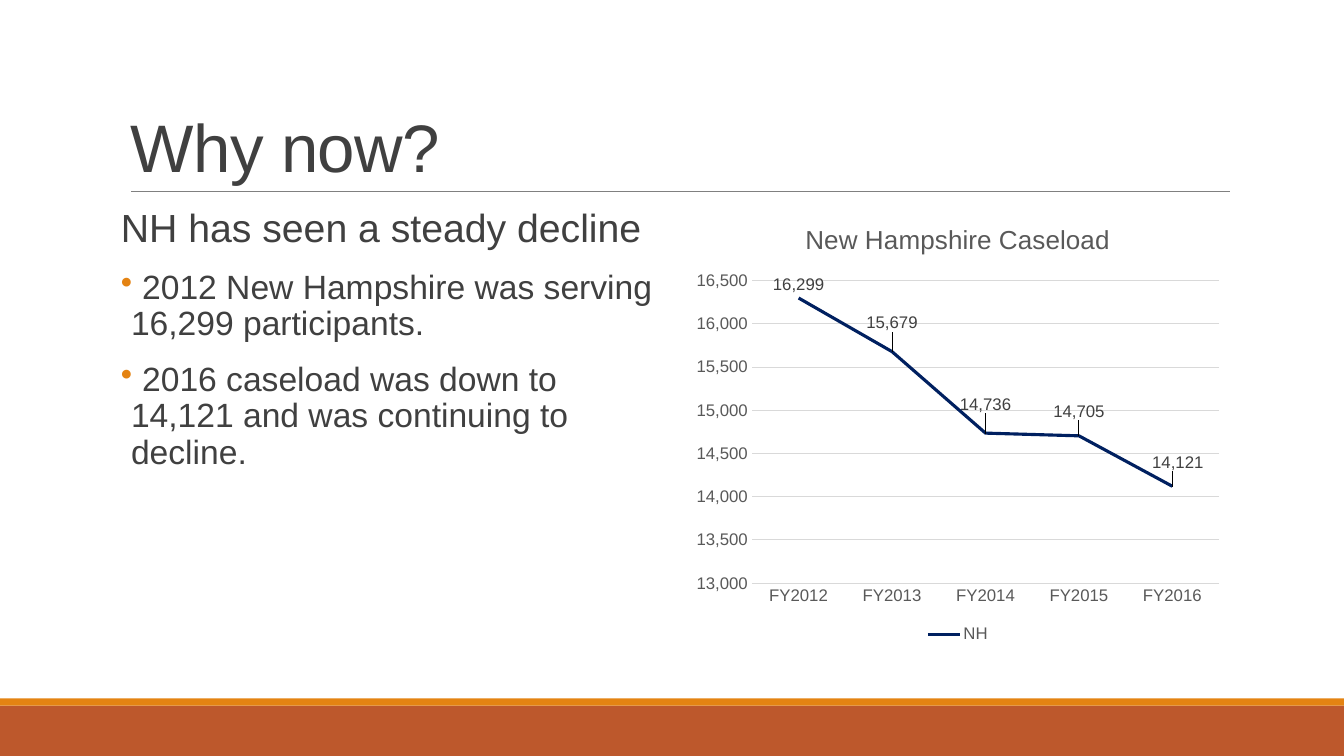
from dataclasses import dataclass

from lxml.etree import SubElement
from pptx import Presentation
from pptx.chart.data import CategoryChartData
from pptx.dml.color import RGBColor
from pptx.enum.chart import (XL_CHART_TYPE, XL_LABEL_POSITION, XL_LEGEND_POSITION,
                             XL_MARKER_STYLE, XL_TICK_MARK)
from pptx.enum.shapes import MSO_CONNECTOR, MSO_SHAPE
from pptx.enum.text import MSO_ANCHOR
from pptx.oxml import parse_xml
from pptx.oxml.ns import nsdecls, qn
from pptx.util import Inches, Pt


@dataclass(frozen=True)
class Theme:
    font: str = "Arial"
    text: RGBColor = RGBColor(0x40, 0x40, 0x40)
    chart_text: RGBColor = RGBColor(0x59, 0x59, 0x59)
    rust: RGBColor = RGBColor(0xBD, 0x58, 0x2C)
    orange: RGBColor = RGBColor(0xE4, 0x83, 0x12)
    rule: RGBColor = RGBColor(0x80, 0x80, 0x80)
    grid: RGBColor = RGBColor(0xD9, 0xD9, 0xD9)
    navy: RGBColor = RGBColor(0x00, 0x20, 0x60)
    title_size: float = 48
    lead_size: float = 28
    bullet_size: float = 24
    chart_title_size: float = 18.6
    chart_size: float = 12


theme = Theme()


def style(font, size, color):
    font.name, font.size, font.bold = theme.font, Pt(size), False
    font.color.rgb = color


def write(paragraph, text, size, color=theme.text, line=None, before=None, after=None,
          tracking=None, bullet=False):
    run = paragraph.add_run()
    run.text = text
    style(run.font, size, color)
    if line:
        paragraph.line_spacing = line
    if before is not None:
        paragraph.space_before, paragraph.space_after = Pt(before), Pt(after)
    if tracking:
        run.font._element.set("spc", str(int(tracking * 100)))
    if bullet:
        properties = paragraph._p.get_or_add_pPr()
        properties.set("marL", str(Inches(0.1)))
        properties.set("indent", str(Inches(-0.1)))
        bullet_color = SubElement(properties, qn("a:buClr"))
        SubElement(bullet_color, qn("a:srgbClr"), val=str(theme.orange))
        SubElement(properties, qn("a:buChar"), char="•")


presentation = Presentation()
presentation.slide_width, presentation.slide_height = Inches(13.33), Inches(7.5)
slide = presentation.slides.add_slide(presentation.slide_layouts[6])
shapes = slide.shapes

# Footer bands
for top, height, color in [(7, 0.5, theme.rust), (6.93, 0.07, theme.orange)]:
    band = shapes.add_shape(MSO_SHAPE.RECTANGLE, 0, Inches(top), Inches(13.33), Inches(height))
    band.shadow.inherit = False
    band.fill.solid()
    band.fill.fore_color.rgb = color
    band.line.fill.background()

# Rule under the heading
rule = shapes.add_connector(MSO_CONNECTOR.STRAIGHT, Inches(1.3), Inches(1.9),
                            Inches(12.2), Inches(1.9))
rule.line.color.rgb = theme.rule
rule.line.width = Pt(0.5)
SubElement(rule._element.spPr, qn("a:effectLst"))

# Heading
heading = shapes.add_textbox(Inches(1.2), Inches(0.31), Inches(11), Inches(1.59)).text_frame
heading.word_wrap = True
heading.vertical_anchor = MSO_ANCHOR.BOTTOM
write(heading.paragraphs[0], "Why now?", theme.title_size, line=0.85, tracking=-0.5)

# Lead sentence and bullets
story = shapes.add_textbox(Inches(1.2), Inches(2.02), Inches(5.4), Inches(4.4)).text_frame
story.word_wrap = True
story.margin_left = story.margin_right = 0
write(story.paragraphs[0], "NH has seen a steady decline", theme.lead_size,
      line=0.9, before=12, after=2)
for point in [" 2012 New Hampshire was serving 16,299 participants.",
              " 2016 caseload was down to 14,121 and was continuing to decline."]:
    write(story.add_paragraph(), point, theme.bullet_size,
          line=0.9, before=12, after=2, bullet=True)

# Caseload chart
caseload = CategoryChartData(number_format="#,##0")
caseload.categories = [f"FY{year}" for year in range(2012, 2017)]
caseload.add_series("NH", [16299, 15679, 14736, 14705, 14121])
chart = shapes.add_chart(XL_CHART_TYPE.LINE, Inches(6.8), Inches(2.02),
                         Inches(5.4), Inches(4.4), caseload).chart
style(chart.font, theme.chart_size, theme.chart_text)
chart.has_title = True
write(chart.chart_title.text_frame.paragraphs[0], "New Hampshire Caseload",
      theme.chart_title_size, theme.chart_text)
chart.chart_title.include_in_layout = False
chart.has_legend = True
chart.legend.position = XL_LEGEND_POSITION.BOTTOM
chart.legend.include_in_layout = False
style(chart.legend.font, theme.chart_size, theme.chart_text)

# Axes
years, cases = chart.category_axis, chart.value_axis
for axis in (years, cases):
    axis.major_tick_mark = axis.minor_tick_mark = XL_TICK_MARK.NONE
    style(axis.tick_labels.font, theme.chart_size, theme.chart_text)
cases.minimum_scale, cases.maximum_scale, cases.major_unit = 13000, 16500, 500
cases.tick_labels.number_format = "#,##0"
cases.tick_labels.number_format_is_linked = False
cases.format.line.fill.background()
for line in (years.format.line, cases.major_gridlines.format.line):
    line.color.rgb = theme.grid
    line.width = Pt(0.75)

# Series line and its value labels
chart.plots[0].vary_by_categories = False
trend = chart.plots[0].series[0]
trend.smooth = False
trend.marker.style = XL_MARKER_STYLE.NONE
trend.format.line.color.rgb = theme.navy
trend.format.line.width = Pt(2.25)
values = trend.data_labels
values.show_value = True
values.number_format, values.number_format_is_linked = "#,##0", False
values.position = XL_LABEL_POSITION.ABOVE
style(values.font, theme.chart_size, theme.text)

# Labels nudged off the line, as fractions of the chart's size
nudges = {1: (0, -0.035), 2: (0, -0.035), 3: (0, -0.025), 4: (0.01, -0.025)}
for index in nudges:
    label = trend.points[index].data_label
    style(label.font, theme.chart_size, theme.text)
    label.position = XL_LABEL_POSITION.ABOVE
for label, (x, y) in zip(trend._element.iter(qn("c:dLbl")), nudges.values()):
    label.insert(1, parse_xml(
        f'<c:layout {nsdecls("c")}><c:manualLayout>'
        f'<c:x val="{x}"/><c:y val="{y}"/></c:manualLayout></c:layout>'))

presentation.save("out.pptx")
